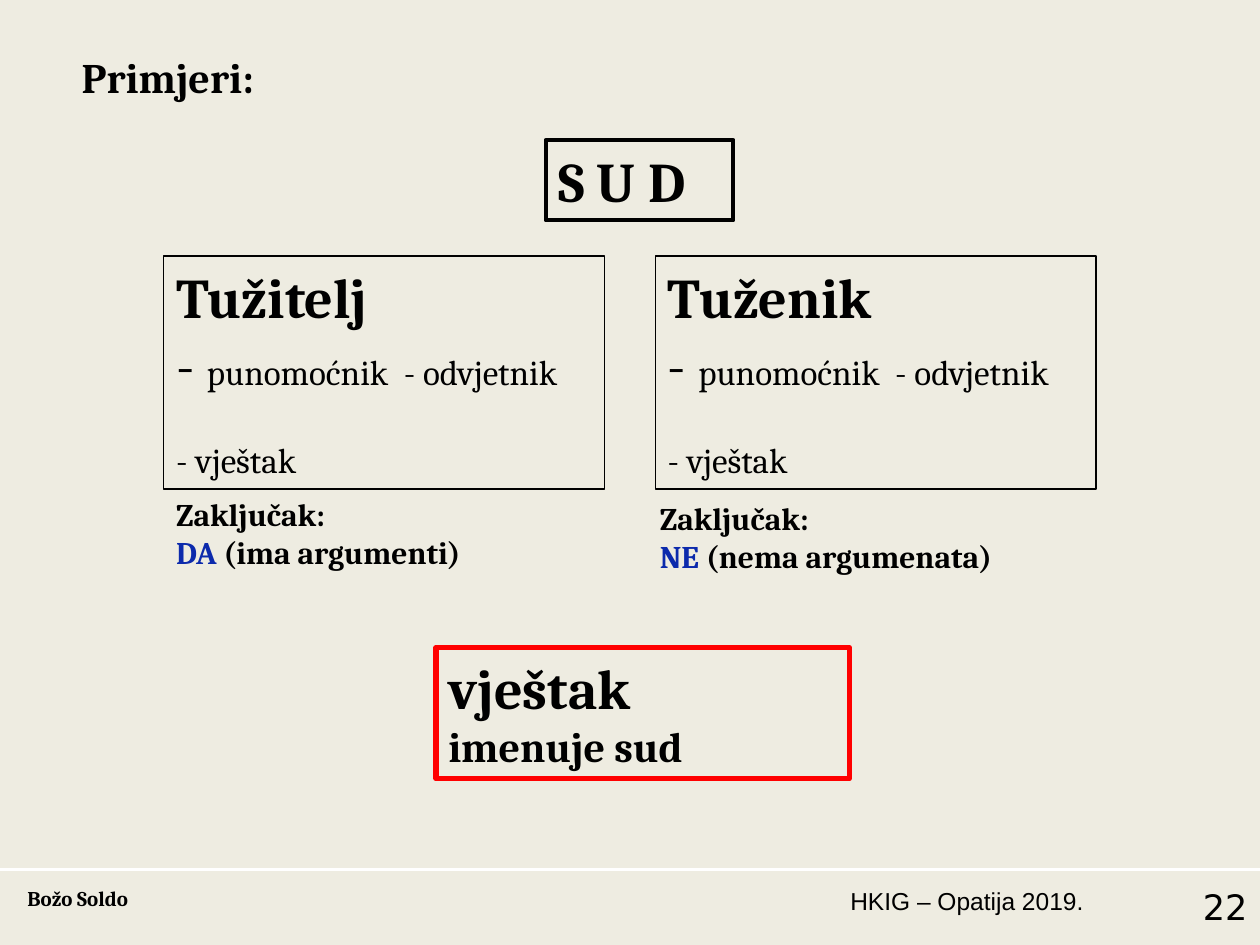
from dataclasses import dataclass
from lxml.etree import SubElement
from pptx import Presentation
from pptx.dml.color import RGBColor
from pptx.enum.shapes import MSO_CONNECTOR, MSO_SHAPE
from pptx.enum.text import MSO_ANCHOR, PP_ALIGN
from pptx.oxml.ns import qn
from pptx.util import Pt


@dataclass(frozen=True)
class Theme:
    back: RGBColor = RGBColor(0xEE, 0xEC, 0xE1)
    ink: RGBColor = RGBColor(0, 0, 0)
    accent: RGBColor = RGBColor(0x0C, 0x2A, 0xAC)
    alert: RGBColor = RGBColor(0xFF, 0, 0)
    rule: RGBColor = RGBColor(0xFF, 0xFF, 0xFF)
    serif: str = "Cambria"
    sans: str = "Arial"
    number_font: str = "DejaVu Sans"
    heading: int = 32
    title: int = 24
    body: int = 20
    verdict: int = 18
    event: int = 14
    author: int = 12


T = Theme()


def style(font, size, bold=True, name=T.serif, color=T.ink):
    font.size, font.bold, font.name = Pt(size), bold, name
    font.color.rgb = color


def write(tf, lines, align=PP_ALIGN.LEFT, **font):
    for i, (text, size) in enumerate(lines):
        p = tf.paragraphs[0] if i == 0 else tf.add_paragraph()
        p.text = text
        p.alignment = align
        style(p.font, size, **font)


def add_text(s, box, lines, wrap=True, **kw):
    tf = s.shapes.add_textbox(*map(Pt, box)).text_frame
    tf.word_wrap = wrap
    write(tf, lines, **kw)
    return tf


def add_frame(s, box, lines, width, color=T.ink):
    sp = s.shapes.add_shape(MSO_SHAPE.RECTANGLE, *map(Pt, box))
    sp.shadow.inherit = False
    sp.fill.background()
    sp.line.color.rgb = color
    sp.line.width = Pt(width)
    tf = sp.text_frame
    tf.word_wrap = True
    tf.vertical_anchor = MSO_ANCHOR.TOP
    write(tf, lines)
    return tf


def add_party(s, box, name):
    tf = add_frame(s, box, [(name, T.heading), ("", T.body), ("- vještak", T.body)], 0.75)
    attorney, expert = tf.paragraphs[1:]
    for text, size in (("- ", T.heading), ("punomoćnik  - odvjetnik", T.body)):
        r = attorney.add_run()
        r.text = text
        style(r.font, size, bold=False)
    expert.font.bold = False
    expert.space_before = Pt(24)


def add_verdict(s, box, answer, reason):
    tf = add_text(s, box, [("Zaključak:", T.verdict), ("", T.verdict)], wrap=False)
    for text, color in ((answer, T.accent), (reason, T.ink)):
        r = tf.paragraphs[1].add_run()
        r.text = text
        r.font.color.rgb = color


def add_footer(s, box):
    x, y, w, h = box
    rule = s.shapes.add_connector(MSO_CONNECTOR.STRAIGHT, Pt(x), Pt(y), Pt(x + w), Pt(y))
    rule.line.color.rgb = T.rule
    rule.line.width = Pt(1.5)
    SubElement(rule._element.spPr, qn("a:effectLst"))
    top, height = y + 5.8, h - 5.8
    right = PP_ALIGN.RIGHT
    add_text(s, (x + 8.6, top, 156, height), [("Božo Soldo", T.author)])
    add_text(s, (x + 473, top, 153.4, height), [("HKIG – Opatija 2019.", T.event)],
             align=right, bold=False, name=T.sans)
    add_text(s, (x + w - 88, top, 88, height), [("22", T.body)],
             align=right, bold=False, name=T.number_font)


def main():
    prs = Presentation()
    prs.slide_width, prs.slide_height = Pt(720), Pt(540)
    s = prs.slides.add_slide(prs.slide_layouts[6])
    s.background.fill.solid()
    s.background.fill.fore_color.rgb = T.back

    add_footer(s, (0, 496.8, 720, 43.2))
    add_text(s, (39.6, 26, 626.4, 65.5), [("Primjeri:", T.title)], align=PP_ALIGN.JUSTIFY)
    add_frame(s, (311.8, 80, 107.3, 46), [("S U D", T.heading)], 2.25)
    for x, name in ((93.6, "Tužitelj"), (374.4, "Tuženik")):
        add_party(s, (x, 146.2, 252, 133.2), name)
    add_verdict(s, (93.6, 279.4, 180, 51), "DA", " (ima argumenti)")
    add_verdict(s, (370, 281.5, 213.8, 51), "NE", " (nema argumenata)")
    add_frame(s, (249.1, 370, 236.2, 75),
              [("vještak", T.heading), ("imenuje sud", T.title)], 3, T.alert)
    prs.save("out.pptx")


if __name__ == "__main__":
    main()
